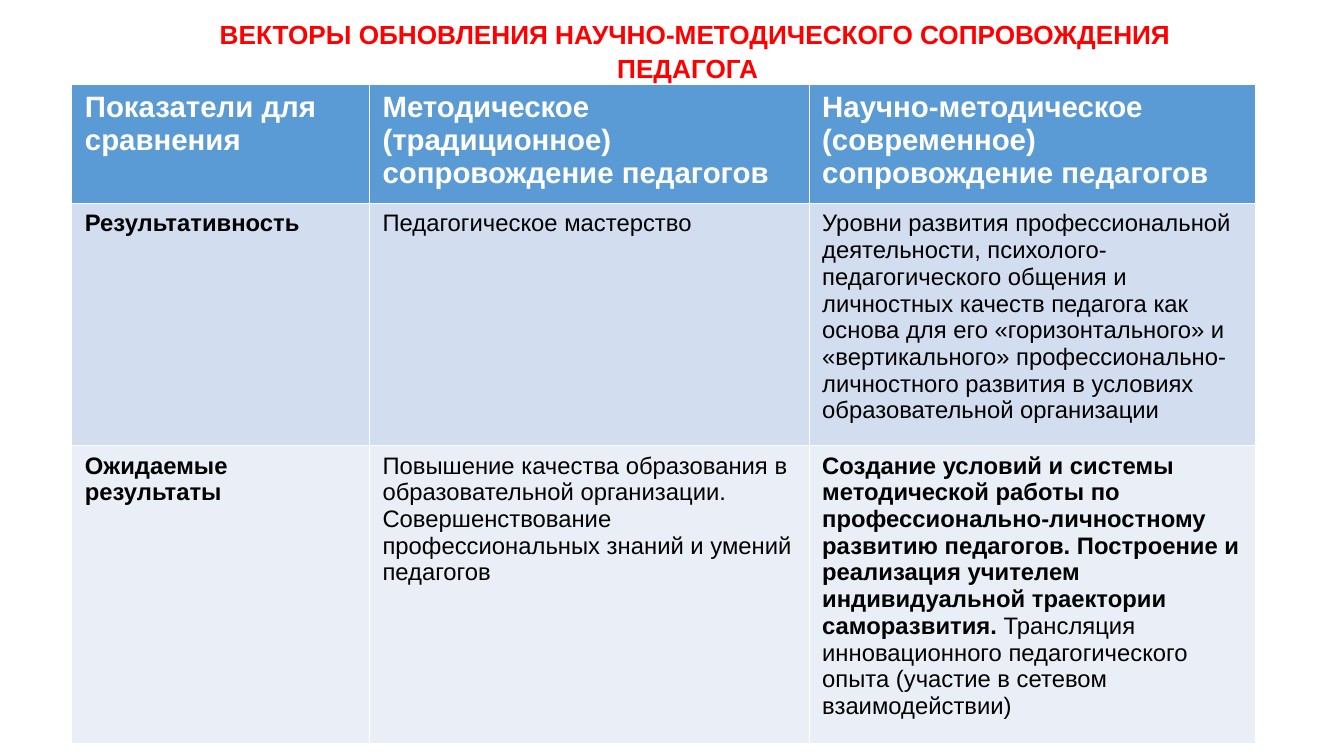
from dataclasses import dataclass

from pptx import Presentation
from pptx import util as u
from pptx.dml.color import RGBColor
from pptx.enum import text
from pptx.oxml import parse_xml
from pptx.oxml.ns import nsdecls

FONT = "Arial"
WHITE = "FFFFFF"
BLACK = "000000"
RED = "FF0000"


@dataclass
class Span:
    text: str
    bold: bool = False


@dataclass
class Row:
    height: float
    fill: str
    color: str
    size: float
    cells: list[list[Span]]


COLUMN_WIDTHS = [7.5, 11.08, 11.26]

ROWS = [
    Row(3.0, "5B9BD5", WHITE, 21, [
        [Span("Показатели для сравнения", True)],
        [Span("Методическое (традиционное) сопровождение педагогов", True)],
        [Span("Научно-методическое (современное) сопровождение педагогов", True)],
    ]),
    Row(6.1, "D2DEEF", BLACK, 17, [
        [Span("Результативность", True)],
        [Span("Педагогическое мастерство")],
        [Span("Уровни развития профессиональной деятельности, психолого-педагогического "
              "общения и личностных качеств педагога как основа для его «горизонтального» "
              "и «вертикального» профессионально-личностного развития в условиях "
              "образовательной организации")],
    ]),
    Row(7.52, "EAEFF7", BLACK, 17, [
        [Span("Ожидаемые результаты", True)],
        [Span("Повышение качества образования в образовательной организации. "
              "Совершенствование профессиональных знаний и умений педагогов")],
        [Span("Создание условий и системы методической работы по "
              "профессионально-личностному развитию педагогов. Построение и реализация "
              "учителем индивидуальной траектории саморазвития. ", True),
         Span("Трансляция инновационного педагогического опыта "
              "(участие в сетевом взаимодействии)")],
    ]),
]


def rgb(value: str) -> RGBColor:
    return RGBColor.from_string(value)


def add_text(para, content: str, *, size: float, color: str, bold: bool = False) -> None:
    run = para.add_run()
    run.text = content
    run.font.name = FONT
    run.font.size = u.Pt(size)
    run.font.bold = bold
    run.font.color.rgb = rgb(color)


def set_borders(cell, color: str, width: float) -> None:
    properties = cell._tc.get_or_add_tcPr()
    for position, side in enumerate("LRTB"):
        properties.insert(position, parse_xml(
            f'<a:ln{side} {nsdecls("a")} w="{u.Pt(width)}"><a:solidFill>'
            f'<a:srgbClr val="{color}"/></a:solidFill></a:ln{side}>'))


def add_title(page) -> None:
    title = page.shapes.title
    title.left, title.top = u.Cm(4.11), u.Cm(0.28)
    title.width, title.height = u.Cm(26.44), u.Cm(1.85)
    frame = title.text_frame
    frame.word_wrap = True
    frame.auto_size = text.MSO_AUTO_SIZE.NONE
    frame.vertical_anchor = text.MSO_ANCHOR.TOP
    frame.margin_left = frame.margin_right = u.Cm(0.25)
    frame.margin_top = frame.margin_bottom = u.Cm(0.13)
    para = frame.paragraphs[0]
    para.alignment = text.PP_ALIGN.CENTER
    para.line_spacing = 1.07
    para._p.get_or_add_pPr().set("indent", str(u.Cm(0.37)))
    add_text(para, "ВЕКТОРЫ ОБНОВЛЕНИЯ НАУЧНО-МЕТОДИЧЕСКОГО СОПРОВОЖДЕНИЯ ПЕДАГОГА",
             size=18.7, color=RED, bold=True)


def fill_cell(cell, row: Row, spans: list[Span]) -> None:
    cell.margin_left = cell.margin_right = u.Cm(0.33)
    cell.margin_top = cell.margin_bottom = u.Cm(0.17)
    cell.fill.solid()
    cell.fill.fore_color.rgb = rgb(row.fill)
    set_borders(cell, WHITE, 1)
    para = cell.text_frame.paragraphs[0]
    for span in spans:
        add_text(para, span.text, size=row.size, color=row.color, bold=span.bold)


def add_comparison(page) -> None:
    table = page.shapes.add_table(
        len(ROWS), len(COLUMN_WIDTHS), u.Cm(1.81), u.Cm(2.13),
        u.Cm(sum(COLUMN_WIDTHS)), u.Cm(sum(row.height for row in ROWS))).table
    for column, width in zip(table.columns, COLUMN_WIDTHS):
        column.width = u.Cm(width)
    for row_index, row in enumerate(ROWS):
        table.rows[row_index].height = u.Cm(row.height)
        for column_index, spans in enumerate(row.cells):
            fill_cell(table.cell(row_index, column_index), row, spans)


def main() -> None:
    deck = Presentation()
    deck.slide_width, deck.slide_height = u.Cm(33.87), u.Cm(19.05)
    page = deck.slides.add_slide(deck.slide_layouts.get_by_name("Title Only"))
    page.background.fill.solid()
    page.background.fill.fore_color.rgb = rgb(WHITE)
    add_title(page)
    add_comparison(page)
    deck.save("out.pptx")


if __name__ == "__main__":
    main()
